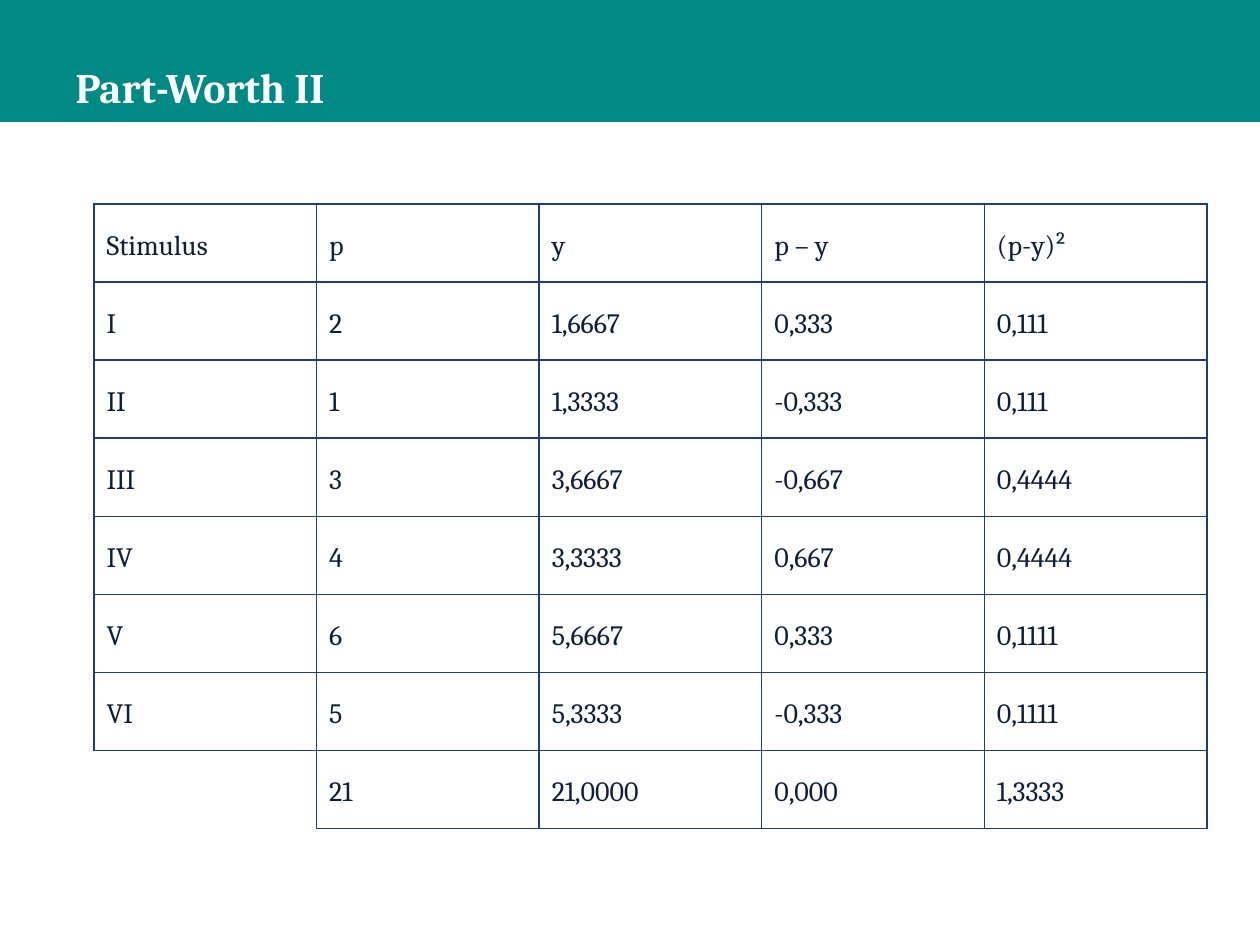
from dataclasses import dataclass

from lxml import etree
from pptx import Presentation
from pptx import util as u
from pptx.dml.color import RGBColor
from pptx.enum import shapes, text
from pptx.oxml.ns import qn

EMU_PER_PX = 914400 / 126


@dataclass(frozen=True)
class Theme:
    font: str = "Cambria"
    band: str = "008A85"
    title: str = "FFFFFF"
    ink: str = "101E3A"
    border: str = "203D75"
    title_size: int = 24
    table_size: int = 16


@dataclass(frozen=True)
class Box:
    left: int
    top: int
    width: int
    height: int

    def emu(self) -> tuple:
        return tuple(px(v) for v in (self.left, self.top, self.width, self.height))


THEME = Theme()
SLIDE_W, SLIDE_H = 1260, 945
BAND = Box(0, 0, SLIDE_W, 120)
RULE_Y = 121
TITLE = Box(63, 58, 621, 57)
TABLE = Box(94, 204, 1113, 625)

ROWS = [
    ("Stimulus", "p", "y", "p – y", "(p-y)²"),
    ("I", "2", "1,6667", "0,333", "0,111"),
    ("II", "1", "1,3333", "-0,333", "0,111"),
    ("III", "3", "3,6667", "-0,667", "0,4444"),
    ("IV", "4", "3,3333", "0,667", "0,4444"),
    ("V", "6", "5,6667", "0,333", "0,1111"),
    ("VI", "5", "5,3333", "-0,333", "0,1111"),
    ("", "21", "21,0000", "0,000", "1,3333"),
]


def px(value: int) -> u.Emu:
    return u.Emu(round(value * EMU_PER_PX))


def rgb(color: str) -> RGBColor:
    return RGBColor.from_string(color)


def write(tf, content: str, *, size: int, color: str, bold: bool = False,
          spacing: float = 1.0) -> None:
    p = tf.paragraphs[0]
    p.alignment = text.PP_ALIGN.LEFT
    p.line_spacing = spacing
    r = p.add_run()
    r.text = content
    r.font.name = THEME.font
    r.font.size = u.Pt(size)
    r.font.bold = bold
    r.font.color.rgb = rgb(color)


def set_borders(cell, sides: str) -> None:
    """Draw the named sides (of L, R, T, B) and switch the others off."""
    tc_pr = cell._tc.get_or_add_tcPr()
    for side in "LRTB":
        ln = etree.SubElement(tc_pr, qn(f"a:ln{side}"), w=str(u.Pt(1)))
        if side in sides:
            fill = etree.SubElement(ln, qn("a:solidFill"))
            etree.SubElement(fill, qn("a:srgbClr"), val=THEME.border)
        else:
            etree.SubElement(ln, qn("a:noFill"))


def add_header(s) -> None:
    band = s.shapes.add_shape(shapes.MSO_SHAPE.RECTANGLE, *BAND.emu())
    band.shadow.inherit = False
    band.fill.solid()
    band.fill.fore_color.rgb = rgb(THEME.band)
    band.line.color.rgb = rgb(THEME.band)
    band.line.width = u.Pt(0.75)

    rule = s.shapes.add_connector(shapes.MSO_CONNECTOR.STRAIGHT,
                                  0, px(RULE_Y), px(SLIDE_W), px(RULE_Y))
    rule.line.color.rgb = rgb(THEME.band)
    rule.line.width = u.Pt(0.5)
    etree.SubElement(rule.element.spPr, qn("a:effectLst"))


def add_title(s, content: str) -> None:
    """Fill the title placeholder and bring it in front of the band."""
    sp = s.shapes.title
    sp.left, sp.top, sp.width, sp.height = TITLE.emu()
    tf = sp.text_frame
    tf.word_wrap = True
    tf.auto_size = text.MSO_AUTO_SIZE.NONE
    tf.vertical_anchor = text.MSO_ANCHOR.MIDDLE
    write(tf, content, size=THEME.title_size, color=THEME.title, bold=True)
    sp.element.getparent().append(sp.element)


def add_table(s, rows: list) -> None:
    table = s.shapes.add_table(len(rows), len(rows[0]), *TABLE.emu()).table
    table.first_row = table.horz_banding = False
    for i, row in enumerate(rows):
        for j, value in enumerate(row):
            cell = table.cell(i, j)
            set_borders(cell, "LRTB" if value else "RT")
            cell.fill.background()
            cell.vertical_anchor = text.MSO_ANCHOR.MIDDLE
            if value:
                write(cell.text_frame, value, size=THEME.table_size,
                      color=THEME.ink, spacing=1.2)


def main() -> None:
    prs = Presentation()
    prs.slide_width, prs.slide_height = px(SLIDE_W), px(SLIDE_H)
    s = prs.slides.add_slide(prs.slide_layouts[5])
    add_header(s)
    add_title(s, "Part-Worth II")
    add_table(s, ROWS)
    prs.save("out.pptx")


if __name__ == "__main__":
    main()
